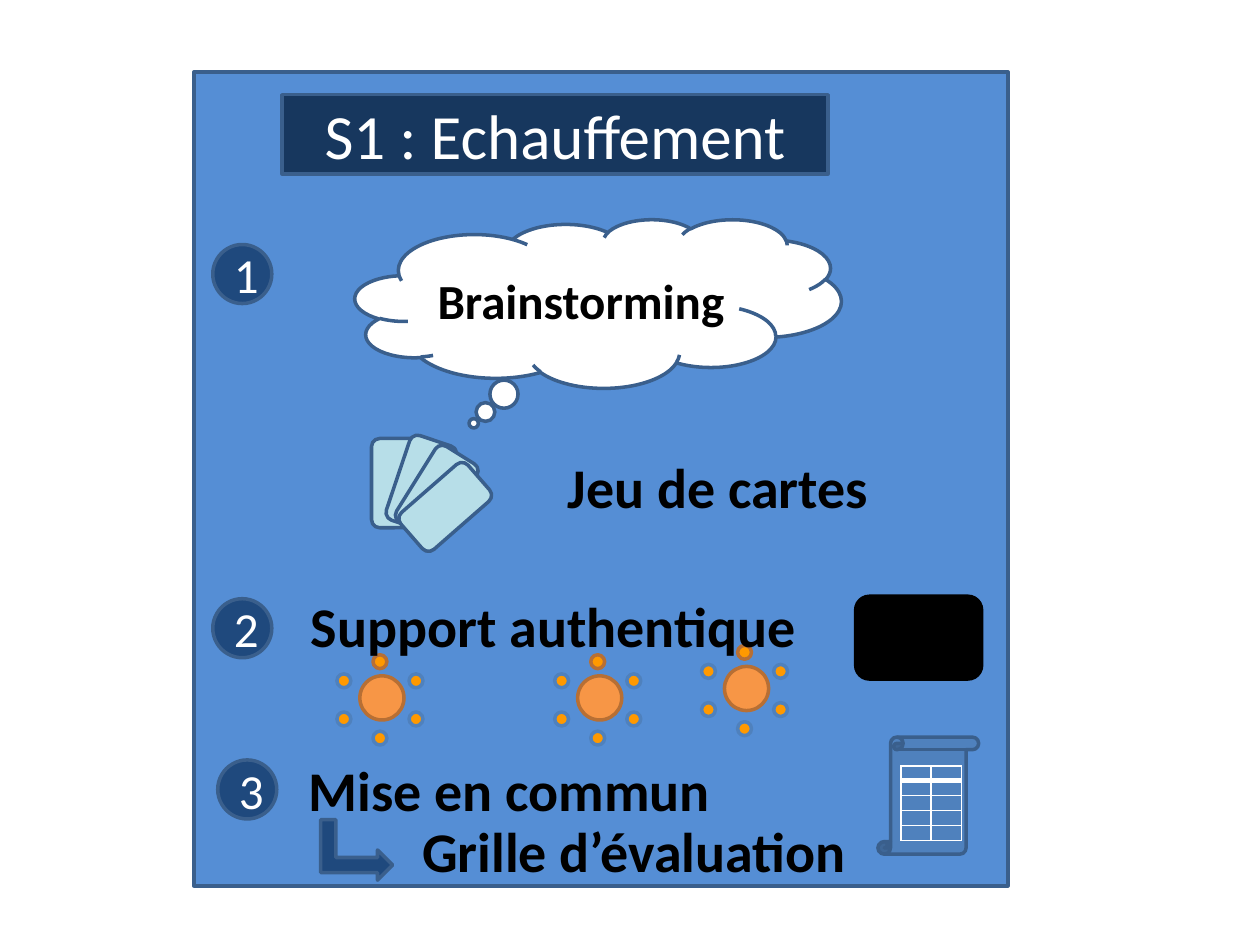
from math import cos, radians, sin

from lxml.etree import SubElement
from pptx import Presentation
from pptx.dml.color import RGBColor
from pptx.enum.shapes import MSO_SHAPE
from pptx.enum.text import MSO_ANCHOR, PP_ALIGN
from pptx.oxml.ns import qn
from pptx.util import Cm, Pt

COLORS = {
    "panel": "558ED5",
    "title": "17375E",
    "navy": "1F497D",
    "outline": "3A5F8C",
    "card": "B7DEE8",
    "sun": "F79646",
    "sun_line": "B76F34",
    "ray": "FF9900",
    "blue": "4F81BD",
    "white": "FFFFFF",
    "black": "000000",
}


def rgb(name):
    return RGBColor.from_string(COLORS[name])


def write(sp, text, size, color, bold=False, align=PP_ALIGN.LEFT):
    tf = sp.text_frame
    tf.text = text
    tf.word_wrap = True
    p = tf.paragraphs[0]
    p.alignment = align
    r = p.runs[0]
    r.font.name = "Calibri"
    r.font.size = Pt(size)
    r.font.bold = bold
    r.font.color.rgb = rgb(color)


def add_shape(shapes, kind, x, y, w, h, fill, line="outline", rotation=0):
    sp = shapes.add_shape(kind, Cm(x), Cm(y), Cm(w), Cm(h))
    sp.shadow.inherit = False
    sp.rotation = rotation
    sp.fill.solid()
    sp.fill.fore_color.rgb = rgb(fill)
    sp.line.color.rgb = rgb(line)
    sp.line.width = Pt(2)
    return sp


def add_caption(sp, text, size, color="white", bold=False):
    write(sp, text, size, color, bold, PP_ALIGN.CENTER)
    sp.text_frame.vertical_anchor = MSO_ANCHOR.MIDDLE


def add_label(s, text, x, y, w=12.14):
    sp = s.shapes.add_textbox(Cm(x), Cm(y), Cm(w), Cm(1.63))
    write(sp, text, 32, "black", bold=True)


def add_badge(s, number, x, y):
    sp = add_shape(s.shapes, MSO_SHAPE.OVAL, x, y, 1.19, 1.19, "navy")
    add_caption(sp, number, 28)


def add_disc(shapes, cx, cy, d, fill, line):
    add_shape(shapes, MSO_SHAPE.OVAL, cx - d / 2, cy - d / 2, d, d, fill, line)


def add_sun(s, cx, cy):
    shapes = s.shapes.add_group_shape().shapes
    add_disc(shapes, cx + 0.04, cy - 0.04, 0.89, "sun", "sun_line")
    for angle in range(0, 360, 60):
        x = cx + 0.84 * sin(radians(angle))
        y = cy - 0.77 * cos(radians(angle))
        add_disc(shapes, x, y, 0.28, "ray", "blue" if angle else "sun_line")


def add_cards(s):
    shapes = s.shapes.add_group_shape().shapes
    for x, y, angle in [(7.49, 8.84, 0), (8, 8.84, 18.6), (8.31, 9.04, 32), (8.48, 9.32, 48.9)]:
        add_shape(shapes, MSO_SHAPE.ROUNDED_RECTANGLE, x, y, 0.99, 1.8, "card", rotation=angle)


def set_borders(cell, widths):
    tcPr = cell._tc.get_or_add_tcPr()
    for i, (side, width) in enumerate(widths.items()):
        ln = SubElement(tcPr, qn("a:ln" + side), w=str(Pt(width)))
        fill = SubElement(ln, qn("a:solidFill"))
        SubElement(fill, qn("a:srgbClr"), val=COLORS["white"])
        tcPr.insert(i, ln)


def add_grid(s, rows=5, cols=2):
    row_h, col_w = 0.3, 0.61
    frame = s.shapes.add_table(rows, cols, Cm(18.16), Cm(15.44), Cm(cols * col_w), Cm(rows * row_h))
    table = frame.table
    for col in table.columns:
        col.width = Cm(col_w)
    for i, row in enumerate(table.rows):
        row.height = Cm(row_h)
        for cell in row.cells:
            cell.margin_left = cell.margin_right = cell.margin_top = cell.margin_bottom = 0
            cell.fill.background()
            end = cell.text_frame.paragraphs[0]._p.get_or_add_endParaRPr()
            end.set("sz", "500")
            set_borders(cell, {"L": 1, "R": 1, "T": 3 if i == 1 else 1, "B": 3 if i == 0 else 1})


def main():
    prs = Presentation()
    prs.slide_width, prs.slide_height = Cm(25.4), Cm(19.05)
    s = prs.slides.add_slide(prs.slide_layouts[6])

    add_shape(s.shapes, MSO_SHAPE.RECTANGLE, 3.91, 1.45, 16.41, 16.41, "panel")
    title = add_shape(s.shapes, MSO_SHAPE.RECTANGLE, 5.69, 1.91, 11, 1.6, "title")
    add_caption(title, "S1 : Echauffement", 36)
    cloud = add_shape(s.shapes, MSO_SHAPE.CLOUD_CALLOUT, 7.16, 4.42, 9.8, 3.4, "white")
    cloud.adjustments[0], cloud.adjustments[1] = -0.256, 0.71
    add_caption(cloud, "Brainstorming", 28, "black", bold=True)

    for number, x, y in [("1", 4.29, 4.93), ("2", 4.29, 12.07), ("3", 4.39, 15.32)]:
        add_badge(s, number, x, y)
    add_cards(s)
    for x, y in [(15.01, 13.92), (12.05, 14.11), (7.66, 14.11)]:
        add_sun(s, x, y)

    add_shape(s.shapes, MSO_SHAPE.BENT_UP_ARROW, 6.58, 16.41, 1.22, 1.45, "navy", rotation=90)
    add_shape(s.shapes, MSO_SHAPE.ROUNDED_RECTANGLE, 17.25, 12.02, 2.54, 1.67, "black", "black")
    add_shape(s.shapes, MSO_SHAPE.VERTICAL_SCROLL, 17.7, 14.86, 2.03, 2.36, "blue")
    add_grid(s)

    add_label(s, "Jeu de cartes", 11.2, 8.99, 6.6)
    add_label(s, "Support authentique", 6.02, 11.79)
    add_label(s, "Mise en commun", 5.97, 15.11)
    add_label(s, "Grille d’évaluation", 8.26, 16.33)
    prs.save("out.pptx")


if __name__ == "__main__":
    main()
